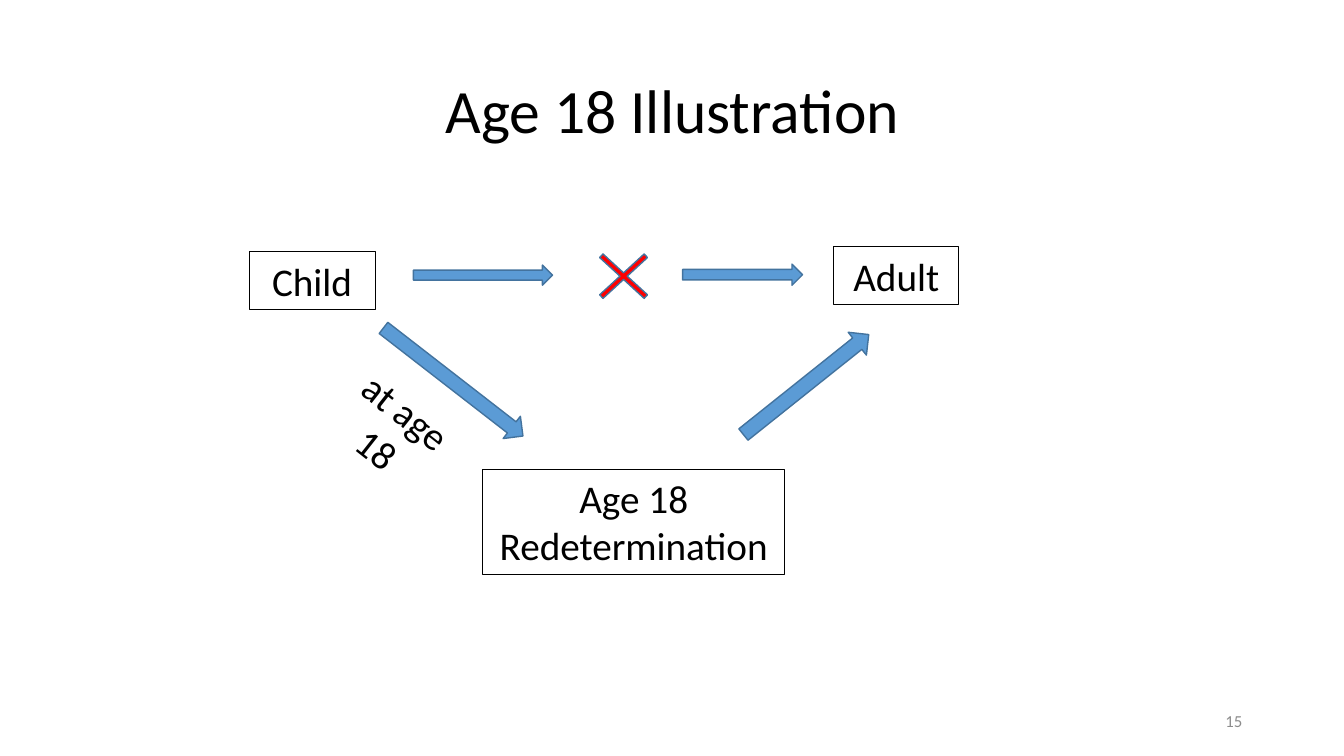
from dataclasses import dataclass
from typing import Optional

from pptx import Presentation
from pptx.dml.color import RGBColor
from pptx.enum.shapes import MSO_SHAPE as Preset
from pptx.enum.text import MSO_ANCHOR as Anchor, PP_ALIGN as Align
from pptx.util import Inches, Pt

COLORS = {
    "text": "000000",
    "number": "8C8C8C",
    "arrow": "5B9BD5",
    "outline": "43739E",
    "cross": "FF0000",
}
FONT = "Calibri"


@dataclass
class Label:
    text: str
    left: float
    top: float
    width: float
    height: float
    size: float = 28
    color: str = "text"
    align: Align = Align.CENTER
    anchor: Anchor = Anchor.TOP
    spacing: float = 1.0
    rotation: float = 0
    framed: bool = False


@dataclass
class Symbol:
    preset: Preset
    left: float
    top: float
    width: float
    height: float
    rotation: float = 0
    color: str = "arrow"
    adjustment: Optional[float] = None


LABELS = [
    Label("Age 18 Illustration", 0.92, 0.4, 11.5, 1.45, size=44,
          anchor=Anchor.MIDDLE, spacing=0.9),
    Label("15", 9.42, 6.95, 3, 0.4, size=12, color="number",
          align=Align.RIGHT, anchor=Anchor.MIDDLE),
    Label("Child", 2.47, 2.5, 1.25, 0.57, framed=True),
    Label("Adult", 8.27, 2.45, 1.24, 0.57, framed=True),
    Label("Age 18 Redetermination", 4.79, 4.66, 2.99, 1.04, framed=True),
    Label("at age 18", 3.22, 3.75, 1.33, 1.04, rotation=38.2),
]

SYMBOLS = [
    Symbol(Preset.RIGHT_ARROW, 4.1, 2.63, 1.38, 0.2),
    Symbol(Preset.RIGHT_ARROW, 6.77, 2.62, 1.19, 0.21),
    Symbol(Preset.MATH_MULTIPLY, 5.76, 2.35, 0.85, 0.78, color="cross",
           adjustment=0.062),
    Symbol(Preset.RIGHT_ARROW, 3.62, 3.65, 1.75, 0.28, rotation=37.8),
    Symbol(Preset.RIGHT_ARROW, 7.2, 3.67, 1.59, 0.29, rotation=321.4),
]


def rgb(name: str) -> RGBColor:
    return RGBColor.from_string(COLORS[name])


def draw_label(page, label: Label) -> None:
    box = page.shapes.add_textbox(Inches(label.left), Inches(label.top),
                                  Inches(label.width), Inches(label.height))
    box.rotation = label.rotation
    if label.framed:
        box.line.color.rgb = rgb("text")
        box.line.width = Pt(0.75)
    frame = box.text_frame
    frame.word_wrap = True
    frame.vertical_anchor = label.anchor
    para = frame.paragraphs[0]
    para.alignment = label.align
    para.line_spacing = label.spacing
    span = para.add_run()
    span.text = label.text
    span.font.name = FONT
    span.font.size = Pt(label.size)
    span.font.color.rgb = rgb(label.color)


def draw_symbol(page, symbol: Symbol) -> None:
    shape = page.shapes.add_shape(symbol.preset, Inches(symbol.left), Inches(symbol.top),
                                  Inches(symbol.width), Inches(symbol.height))
    shape.shadow.inherit = False
    shape.rotation = symbol.rotation
    if symbol.adjustment is not None:
        shape.adjustments[0] = symbol.adjustment
    shape.fill.solid()
    shape.fill.fore_color.rgb = rgb(symbol.color)
    shape.line.color.rgb = rgb("outline")
    shape.line.width = Pt(1)


def main() -> None:
    deck = Presentation()
    deck.slide_width = Inches(13.33)
    deck.slide_height = Inches(7.5)
    page = deck.slides.add_slide(deck.slide_layouts[6])
    for symbol in SYMBOLS:
        draw_symbol(page, symbol)
    for label in LABELS:
        draw_label(page, label)
    deck.save("out.pptx")


if __name__ == "__main__":
    main()
